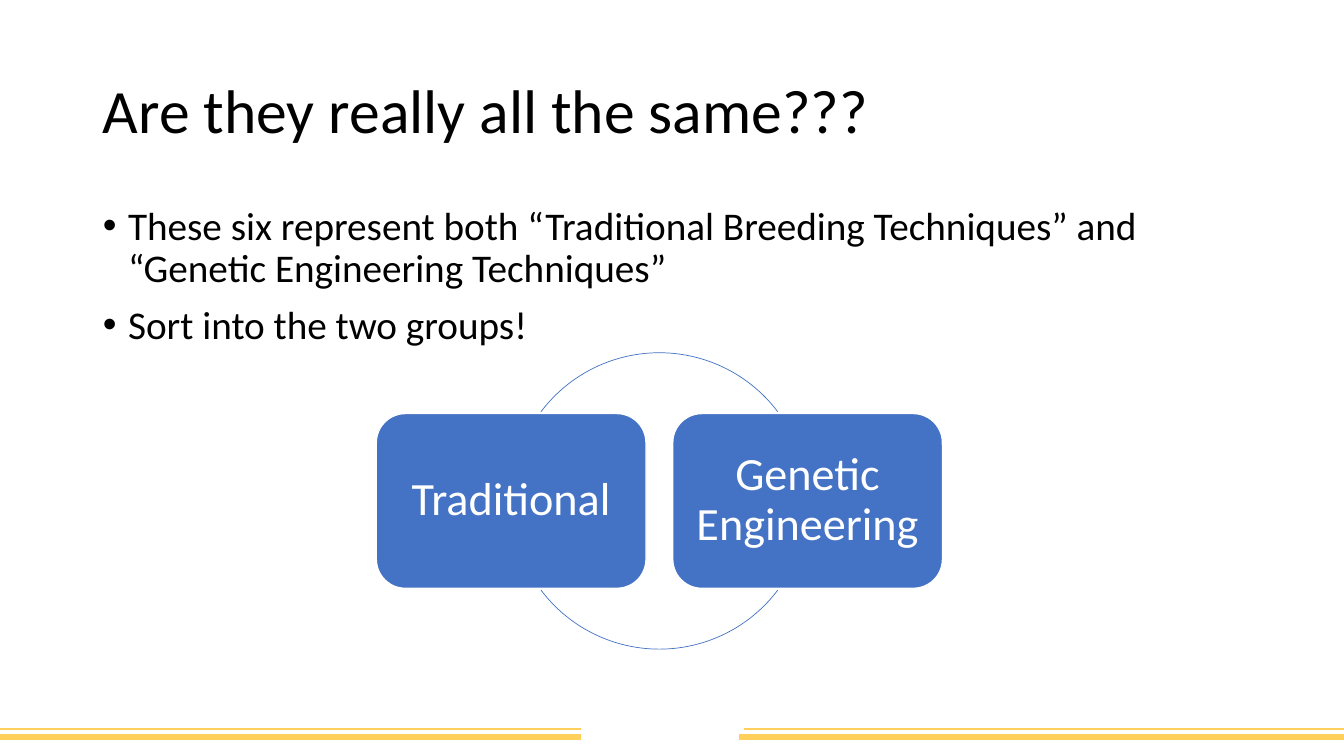
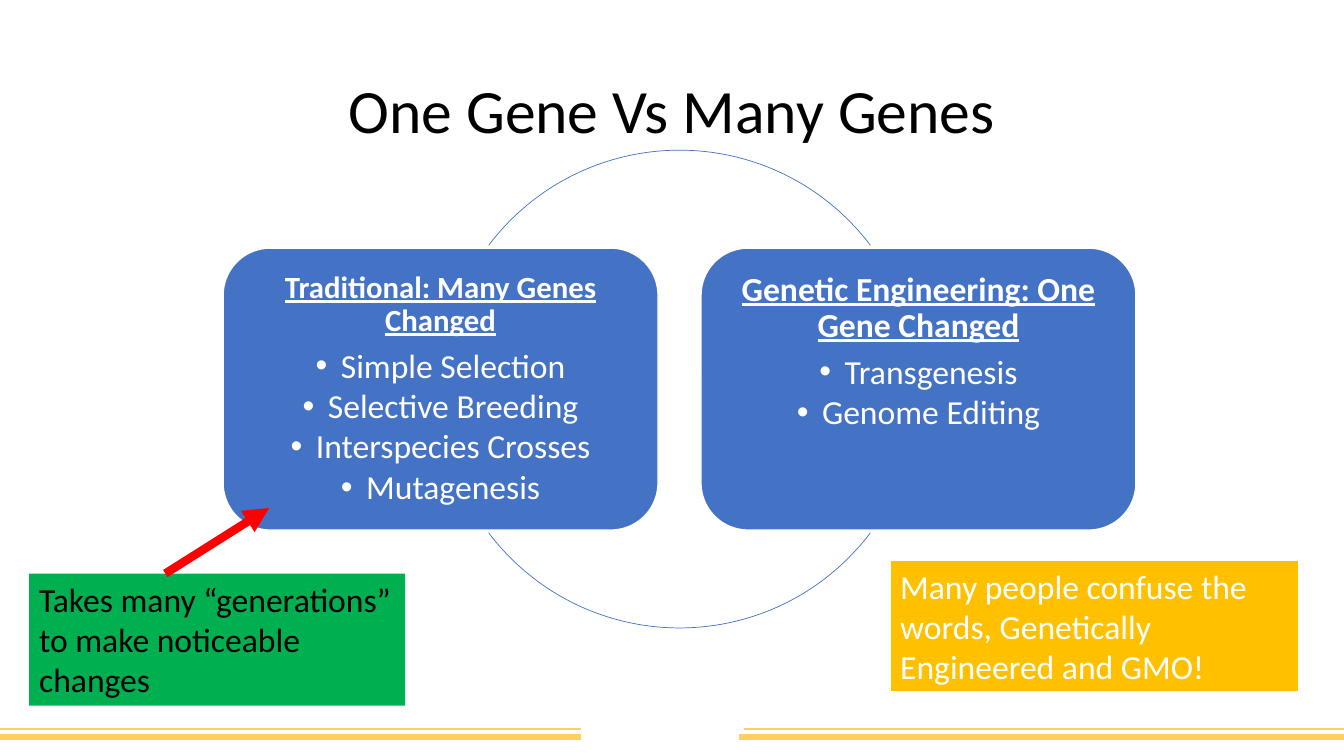
import pptx
import pptx.util
import pptx.dml.color
import pptx.enum.shapes
import pptx.enum.text
import pptx.oxml.ns
from lxml import etree

Inches, Pt = pptx.util.Inches, pptx.util.Pt
SHAPE = pptx.enum.shapes.MSO_SHAPE
ALIGN = pptx.enum.text.PP_ALIGN
ANCHOR = pptx.enum.text.MSO_ANCHOR
qn = pptx.oxml.ns.qn

COLORS = {"black": "000000", "white": "FFFFFF", "blue": "4472C4", "band": "FFD05B",
          "amber": "FFC000", "green": "00B050", "red": "FF0000"}
FONT = "Calibri"
WIDTH, HEIGHT = 13.33, 7.5
MARGIN = 0.92

# (left, right, y, weight)
BANDS = [(7.33, WIDTH, 7.31, 4.5), (0, 5.76, 7.31, 4.5),
         (0, 5.76, 7.23, 1.5), (7.38, WIDTH, 7.23, 1.5)]

SORTING = {
    "title": "Are they really all the same???",
    "align": ALIGN.LEFT,
    "points": [
        "These six represent both “Traditional Breeding Techniques” and "
        "“Genetic Engineering Techniques”",
        "Sort into the two groups!"],
    "cycle": {"center": (6.54, 4.97), "radius": 1.47, "inset": 0.14, "groups": [
        {"heading": "Traditional", "size": 33, "items": []},
        {"heading": "Genetic Engineering", "size": 33, "items": []}]},
}
GENES = {
    "title": "One Gene Vs Many Genes",
    "align": ALIGN.CENTER,
    "cycle": {"center": (6.74, 3.86), "radius": 2.37, "inset": 0.1, "groups": [
        {"heading": "Traditional: Many Genes Changed", "size": 22,
         "items": ["Simple Selection", "Selective Breeding",
                   "Interspecies Crosses", "Mutagenesis"]},
        {"heading": "Genetic Engineering: One Gene Changed", "size": 24,
         "items": ["Transgenesis", "Genome Editing"]}]},
    # (text, left, top, width, fill, font colour, outline)
    "callouts": [
        ("Many people confuse the words, Genetically Engineered and GMO!",
         8.83, 5.56, 4.06, "amber", "white", "white"),
        ("Takes many “generations” to make noticeable changes",
         0.29, 5.69, 3.73, "green", "black", None)],
    "arrow": ((1.64, 5.69), (2.67, 5.04)),
}
CALLOUT_HEIGHT = 1.31
ARC_RISE = 37  # degrees between the horizontal and each arc end


def rgb(name):
    return pptx.dml.color.RGBColor.from_string(COLORS[name])


def place(shape, left, top, width, height):
    shape.left, shape.top = Inches(left), Inches(top)
    shape.width, shape.height = Inches(width), Inches(height)


def add_run(paragraph, text, size, color, strong=False):
    """Write one run; strong means bold and underlined."""
    run = paragraph.add_run()
    run.text = text
    run.font.name, run.font.size = FONT, Pt(size)
    run.font.bold = run.font.underline = strong
    run.font.color.rgb = rgb(color)


def set_bullet(paragraph):
    properties = paragraph._p.get_or_add_pPr()
    properties.set("marL", str(Inches(0.25)))
    properties.set("indent", str(Inches(-0.25)))
    etree.SubElement(properties, qn("a:buFont")).set("typeface", "Arial")
    etree.SubElement(properties, qn("a:buChar")).set("char", "•")


def paragraph_at(frame, index):
    return frame.paragraphs[0] if index == 0 else frame.add_paragraph()


def add_line(slide, start, end, color, weight, arrow=False):
    line = slide.shapes.add_connector(
        pptx.enum.shapes.MSO_CONNECTOR.STRAIGHT,
        *[Inches(value) for value in (*start, *end)])
    line.line.color.rgb, line.line.width = rgb(color), Pt(weight)
    if arrow:
        etree.SubElement(line.line._get_or_add_ln(), qn("a:tailEnd")).set("type", "triangle")
    etree.SubElement(line._element.spPr, qn("a:effectLst"))


def add_shape(slide, preset, box, fill=None, outline=None, weight=1):
    shape = slide.shapes.add_shape(preset, *[Inches(value) for value in box])
    shape.shadow.inherit = False
    for part, color in ((shape.fill, fill), (shape.line.fill, outline)):
        if color:
            part.solid()
            part.fore_color.rgb = rgb(color)
        else:
            part.background()
    if outline:
        shape.line.width = Pt(weight)
    return shape


def add_group(slide, box, group, inset):
    frame = add_shape(slide, SHAPE.ROUNDED_RECTANGLE, box, "blue", "white").text_frame
    frame.word_wrap = True
    frame.margin_left = frame.margin_right = Inches(inset)
    frame.margin_top = frame.margin_bottom = Inches(inset)
    has_items = bool(group["items"])
    frame.vertical_anchor = ANCHOR.TOP if has_items else ANCHOR.MIDDLE
    for index, text in enumerate([group["heading"], *group["items"]]):
        paragraph = paragraph_at(frame, index)
        if index:
            paragraph.level = 1
            set_bullet(paragraph)
        paragraph.alignment, paragraph.line_spacing = ALIGN.CENTER, 0.9
        if has_items:
            paragraph.space_after = Pt(3 if index else 7.5)
        add_run(paragraph, text, 24 if index else group["size"], "white",
                strong=has_items and not index)


def add_cycle(slide, cycle):
    """Two boxes centred on opposite sides of a circle, joined by its arcs."""
    (x, y), radius = cycle["center"], cycle["radius"]
    width, height = 1.82 * radius, 1.18 * radius
    for side, group in zip((-1, 1), cycle["groups"]):
        box = (x + side * radius - width / 2, y - height / 2, width, height)
        add_group(slide, box, group, cycle["inset"])
    for start in (180 + ARC_RISE, ARC_RISE):
        arc = add_shape(slide, SHAPE.ARC, (x - radius, y - radius, 2 * radius, 2 * radius),
                        outline="blue", weight=0.5)
        # angles are stored in 1/60000 degree, adjustments in 1/100000
        arc.adjustments[0] = start * 0.6
        arc.adjustments[1] = (start + 180 - 2 * ARC_RISE) * 0.6


def add_callout(slide, text, left, top, width, fill, color, outline):
    box = (left, top, width, CALLOUT_HEIGHT)
    frame = add_shape(slide, SHAPE.RECTANGLE, box, fill, outline, 1.5).text_frame
    frame.word_wrap, frame.vertical_anchor = True, ANCHOR.TOP
    frame.paragraphs[0].alignment = ALIGN.LEFT
    add_run(frame.paragraphs[0], text, 24, color)


def add_points(slide, points):
    body = slide.placeholders[1]
    place(body, MARGIN, 2, WIDTH - 2 * MARGIN, 4.76)
    body.text_frame.auto_size = pptx.enum.text.MSO_AUTO_SIZE.NONE
    for index, text in enumerate(points):
        paragraph = paragraph_at(body.text_frame, index)
        set_bullet(paragraph)
        paragraph.line_spacing = 0.9
        paragraph.space_before = Pt(10 if index else 0)
        add_run(paragraph, text, 28, "black")


def add_slide(deck, content):
    """Start a slide with the shared bands and title, then add its content."""
    layout = "Title and Content" if "points" in content else "Title Only"
    slide = deck.slides.add_slide(deck.slide_layouts.get_by_name(layout))
    for left, right, y, weight in BANDS:
        add_line(slide, (left, y), (right, y), "band", weight)
    title = slide.shapes.title
    place(title, MARGIN, 0.4, WIDTH - 2 * MARGIN, 1.45)
    frame = title.text_frame
    frame.auto_size = pptx.enum.text.MSO_AUTO_SIZE.NONE
    frame.vertical_anchor = ANCHOR.MIDDLE
    frame.paragraphs[0].alignment = content["align"]
    frame.paragraphs[0].line_spacing = 0.9
    add_run(frame.paragraphs[0], content["title"], 44, "black")
    if "points" in content:
        add_points(slide, content["points"])
    add_cycle(slide, content["cycle"])
    for callout in content.get("callouts", []):
        add_callout(slide, *callout)
    if "arrow" in content:
        add_line(slide, *content["arrow"], "red", 6, arrow=True)


def main():
    deck = pptx.Presentation()
    deck.slide_width, deck.slide_height = Inches(WIDTH), Inches(HEIGHT)
    for content in (SORTING, GENES):
        add_slide(deck, content)
    deck.save("out.pptx")


if __name__ == "__main__":
    main()
